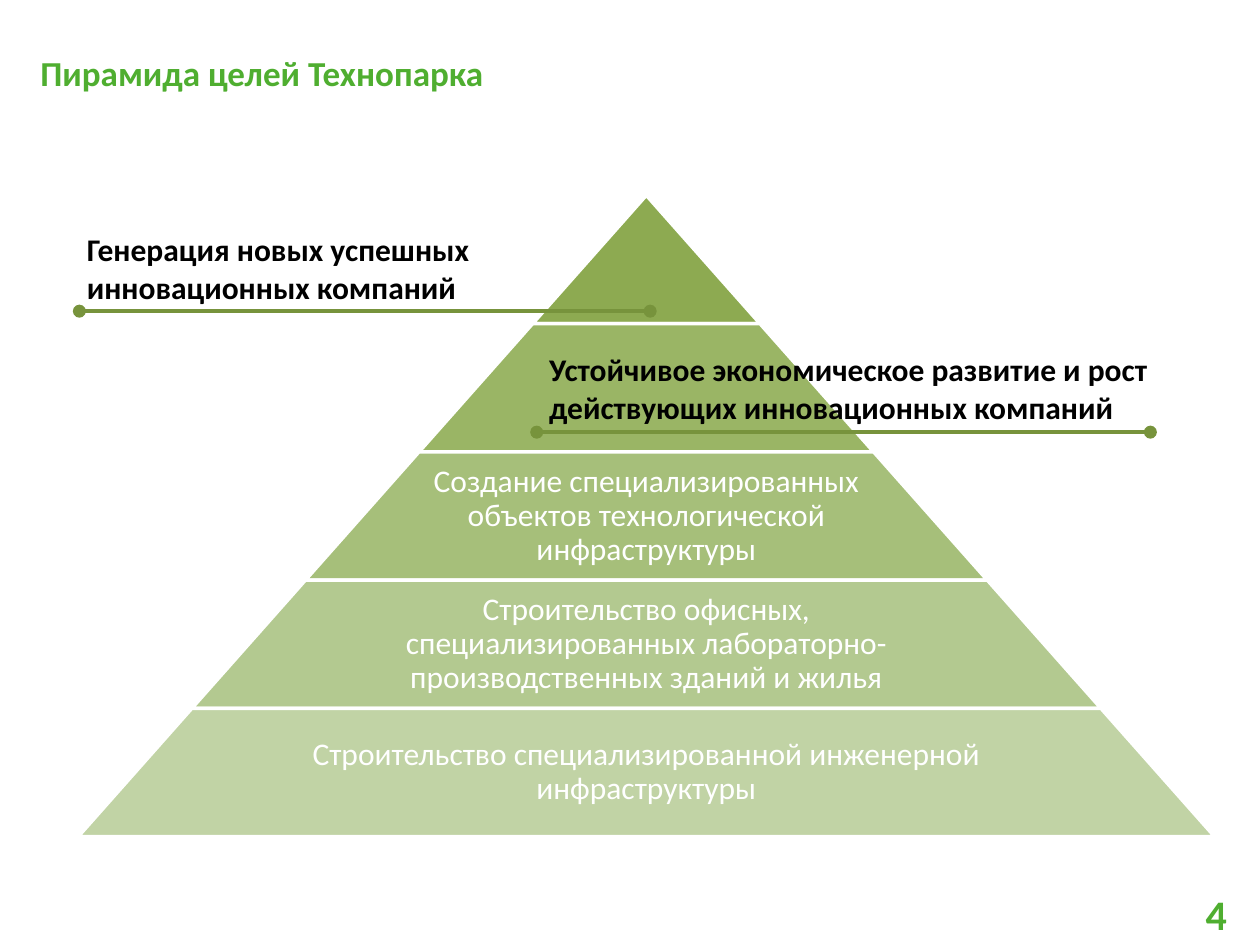
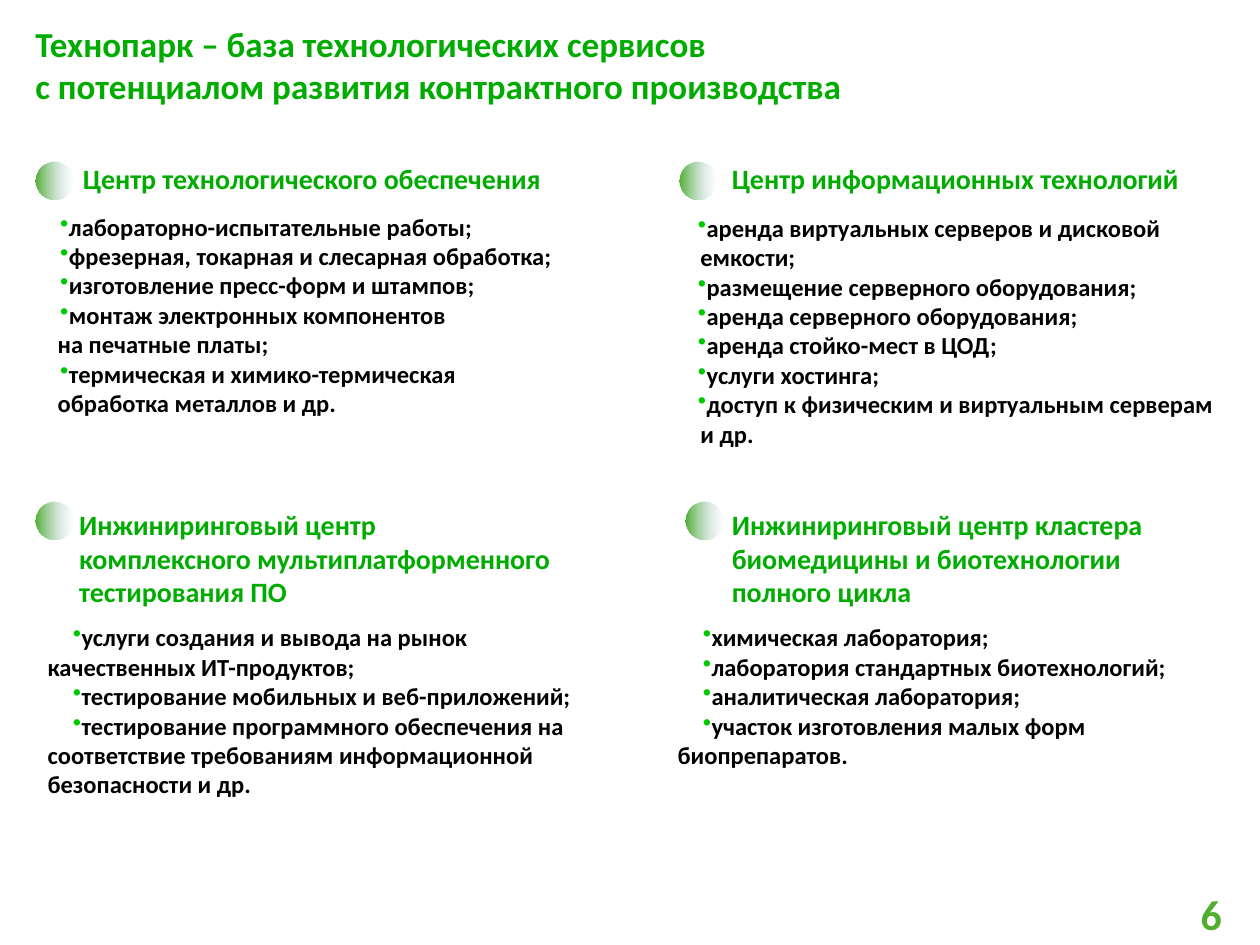
"""Build two slides: the pyramid of goals and the service centres."""
from lxml import etree
from pptx import Presentation
from pptx import util as u
from pptx.dml import color as clr
from pptx.enum import shapes as sh
from pptx.enum import text as tx
from pptx.oxml import ns

FONT = "Calibri"
HUES = {
    "green": "4FAE30", "vivid": "00AC00", "bullet": "00C800", "olive": "77933C",
    "black": "000000", "white": "FFFFFF", "clear": "C2D1ED",
}
TIERS = ["8DAA51", "9AB565", "A6BF7A", "B3C990", "C1D3A5"]
GOALS = [
    "", "",
    "Создание специализированных объектов технологической инфраструктуры",
    "Строительство офисных, специализированных лабораторно-производственных зданий и жилья",
    "Строительство специализированной инженерной инфраструктуры",
]
NOTES = [
    ("Устойчивое экономическое развитие и рост действующих инновационных компаний",
     (4.26, 2.73, 5.21, 0.71), (4.26, 9.13, 3.43)),
    ("Генерация новых успешных инновационных компаний",
     (0.59, 1.78, 4.38, 0.71), (0.63, 5.16, 2.47)),
]
CENTRES = [
    {"spot": (0.28, 1.28), "head": (0.28, -0.05, 4, 0.37), "list": (-0.1, 0.35, 4.58, 1.75),
     "align": "JUSTIFY", "inset": 0.18,
     "name": ["Центр технологического обеспечения"],
     "items": ["лабораторно-испытательные работы;",
               "фрезерная, токарная и слесарная обработка;",
               "изготовление пресс-форм и штампов;",
               ("монтаж электронных компонентов", "на печатные платы;"),
               ("термическая и химико-термическая", "обработка металлов и др.")]},
    {"spot": (5.39, 1.28), "head": (0.32, -0.05, 4.38, 0.37), "list": (-0.15, 0.36, 4.61, 2.26),
     "inset": 0.22,
     "name": ["Центр информационных технологий"],
     "items": [("аренда виртуальных серверов и дисковой", "емкости;"),
               "размещение серверного оборудования;",
               "аренда серверного оборудования;",
               "аренда стойко-мест в ЦОД;",
               "услуги хостинга;",
               ("доступ к физическим и виртуальным серверам", "и др.")]},
    {"spot": (0.28, 3.98), "head": (0.25, 0, 4.1, 0.91), "list": (0, 0.91, 4.74, 1.78),
     "name": ["Инжиниринговый центр", "комплексного мультиплатформенного тестирования ПО"],
     "items": ["услуги создания и вывода на рынок качественных ИТ-продуктов;",
               "тестирование мобильных и веб-приложений;",
               "тестирование программного обеспечения на соответствие требованиям "
               "информационной безопасности и др."]},
    {"spot": (5.44, 3.98), "head": (0.27, 0, 4.09, 0.91), "list": (-0.16, 0.91, 4.8, 1.04),
     "name": ["Инжиниринговый центр кластера биомедицины и биотехнологии полного цикла"],
     "items": ["химическая лаборатория;",
               "лаборатория стандартных биотехнологий;",
               "аналитическая лаборатория;",
               "участок изготовления малых форм биопрепаратов."]},
]


def rgb(hue):
    """Return the colour for a hex string."""
    return clr.RGBColor.from_string(hue)


def inch(box):
    """Turn a tuple of numbers into lengths."""
    return [u.Inches(n) for n in box]


def sub(node, tag, **attrs):
    """Add a drawing element below a node."""
    return etree.SubElement(node, ns.qn(tag), **attrs)


def write(frame, lines, size=18, hue="black", bold=True, align="LEFT",
          anchor="TOP", wrap=True, space=None, pad=None):
    """Fill a text frame with formatted paragraphs and return them."""
    frame.word_wrap = wrap
    frame.auto_size = tx.MSO_AUTO_SIZE.NONE
    frame.vertical_anchor = getattr(tx.MSO_ANCHOR, anchor)
    if pad is not None:
        frame.margin_left = frame.margin_right = u.Inches(pad)
        frame.margin_top = frame.margin_bottom = u.Inches(pad)
    paras = []
    for i, line in enumerate(lines):
        para = frame.add_paragraph() if i else frame.paragraphs[0]
        para.alignment = getattr(tx.PP_ALIGN, align)
        if space:
            para.line_spacing = space
        run = para.add_run()
        run.text = line
        font = run.font
        font.name, font.size, font.bold = FONT, u.Pt(size), bold
        font.color.rgb = rgb(HUES[hue])
        paras.append(para)
    return paras


def label(slide, box, lines, **form):
    """Add a text box and return its paragraphs."""
    return write(slide.shapes.add_textbox(*inch(box)).text_frame, lines, **form)


def start(deck, box, lines, hue, page, left):
    """Add a slide with its title and page number."""
    slide = deck.slides.add_slide(deck.slide_layouts[5])
    title = slide.shapes.title
    title.left, title.top, title.width, title.height = inch(box)
    write(title.text_frame, lines, size=20, hue=hue, wrap=False)
    label(slide, (left, 7, 0.37, 0.5), [page], size=24, hue="green", wrap=False)
    return slide


def tower(slide, box):
    """Draw the tiers of the pyramid inside a box."""
    left, top, width, height = box
    count = len(TIERS)
    step, tall = width / count, height / count
    mid = left + width / 2
    for i, (fill, goal) in enumerate(zip(TIERS, GOALS)):
        wide, y = step * (i + 1), top + tall * i
        tier = slide.shapes.add_shape(
            sh.MSO_SHAPE.TRAPEZOID, *inch((mid - wide / 2, y, wide, tall)))
        tier.adjustments[0] = step / 2 / tall
        tier.shadow.inherit = False
        tier.fill.solid()
        tier.fill.fore_color.rgb = rgb(fill)
        tier.line.color.rgb = rgb(HUES["white"])
        tier.line.width = u.Pt(2)
        if goal:
            span = wide * 0.65
            label(slide, (mid - span / 2, y, span, tall), [goal], hue="white", bold=False,
                  align="CENTER", anchor="MIDDLE", space=0.9, pad=0.03)


def note(slide, words, box, rule):
    """Add a caption underlined by a line with round ends."""
    label(slide, box, [words])
    near, far, y = rule
    line = slide.shapes.add_connector(sh.MSO_CONNECTOR.STRAIGHT, *inch((near, y, far, y)))
    line.line.color.rgb = rgb(HUES["olive"])
    line.line.width = u.Pt(2.5)
    stroke = line.line._get_or_add_ln()
    sub(stroke, "a:headEnd", type="oval")
    sub(stroke, "a:tailEnd", type="oval")
    sub(line._element.spPr, "a:effectLst")


def dot(slide, x, y):
    """Draw a round marker that fades out to the right."""
    mark = slide.shapes.add_shape(sh.MSO_SHAPE.OVAL, *inch((x, y, 0.3, 0.3)))
    mark.shadow.inherit = False
    mark.line.fill.background()
    mark.fill.gradient()
    mark.fill.gradient_angle = 0
    for stop, hue in zip(mark.fill.gradient_stops, ("green", "clear")):
        stop.color.rgb = rgb(HUES[hue])
    last = list(mark._element.spPr.iter(ns.qn("a:srgbClr")))[-1]
    sub(last, "a:alpha", val="0")


def bullet(para):
    """Give a paragraph a green bullet and a first-line indent."""
    props = para._p.get_or_add_pPr()
    props.set("marL", "0")
    props.set("indent", str(u.Inches(0.2)))
    sub(sub(props, "a:buClr"), "a:srgbClr", val=HUES["bullet"])
    sub(props, "a:buChar", char="•")


def centre(slide, data):
    """Place marker, heading and list of one centre at its spot."""
    x, y = data["spot"]
    dot(slide, x, y)
    for part in ("head", "list"):
        dx, dy, wide, tall = data[part]
        box = (x + dx, y + dy, wide, tall)
        if part == "head":
            label(slide, box, data["name"], size=16, hue="vivid")
            continue
        rows = []
        for item in data["items"]:
            pair = (item,) if isinstance(item, str) else item
            rows += [(line, i == 0) for i, line in enumerate(pair)]
        paras = label(slide, box, [line for line, _ in rows], size=14,
                      align=data.get("align", "LEFT"))
        for para, (_, first) in zip(paras, rows):
            if first:
                bullet(para)
            else:
                para._p.get_or_add_pPr().set("marL", str(u.Inches(data["inset"])))


def main():
    """Build and save the deck."""
    deck = Presentation()
    deck.slide_width, deck.slide_height = inch((10, 7.5))
    goals = start(deck, (0.22, 0.36, 4, 0.44), ["Пирамида целей Технопарка"],
                  "green", "4", 9.47)
    tower(goals, (0.62, 1.55, 9.02, 5.09))
    for item in NOTES:
        note(goals, *item)
    base = start(deck, (0.18, 0.13, 6.64, 0.77),
                 ["Технопарк – база технологических сервисов",
                  "с потенциалом развития контрактного производства"],
                 "vivid", "6", 9.43)
    for data in CENTRES:
        centre(base, data)
    deck.save("out.pptx")


if __name__ == "__main__":
    main()
